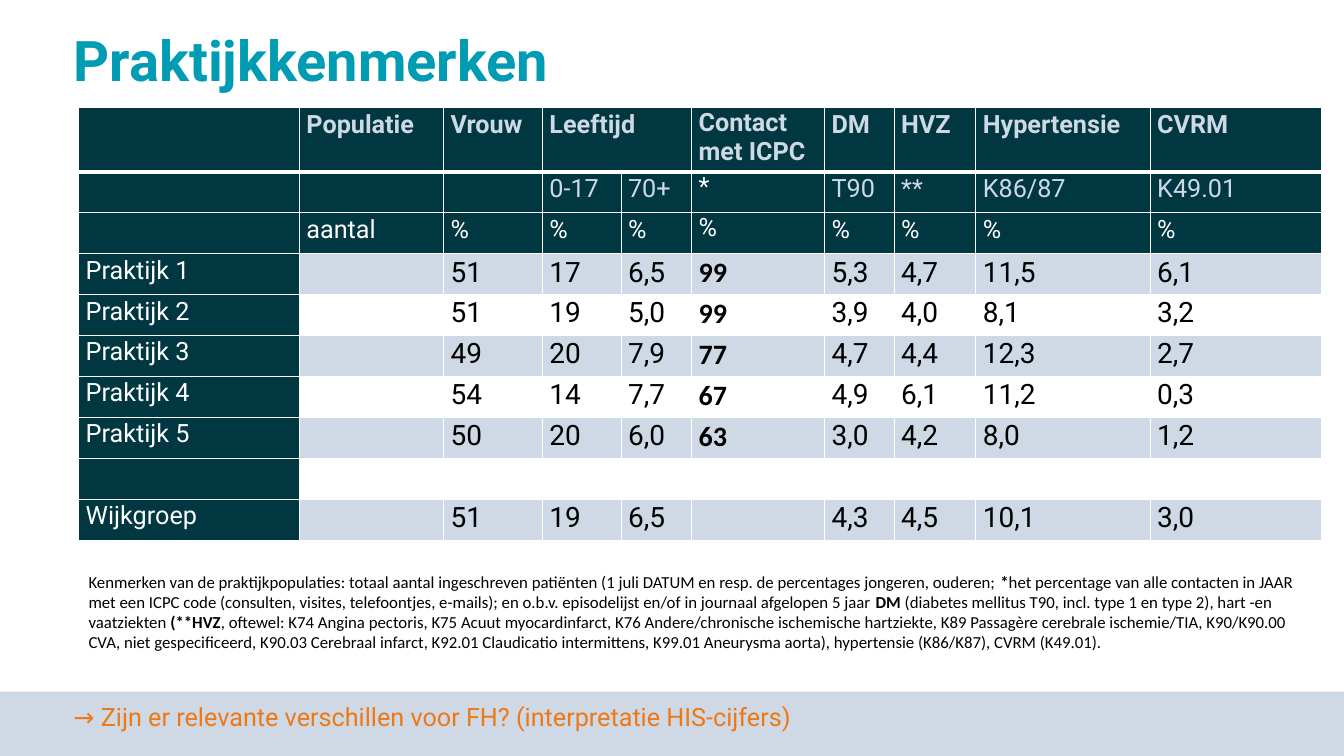
import pptx
import pptx.dml.color
import pptx.enum.shapes
import pptx.enum.text
import pptx.oxml
import pptx.oxml.ns
import pptx.util

Pt = pptx.util.Pt
DARK, PALE, WHITE, BLACK = "003741", "CED9E5", "FFFFFF", "000000"
TEAL, ORANGE = "009CB4", "F07814"

WIDTHS = [157.7, 103, 70.6, 56.2, 50.4, 95, 49.7, 58.3, 124.6, 122.4]
HEIGHTS = [45.8] + [29.25] * 9
ROWS = [
    "|Populatie|Vrouw|Leeftijd||Contact met ICPC|DM|HVZ|Hypertensie|CVRM",
    "|||0-17|70+|*|T90|**|K86/87|K49.01",
    "|aantal|%|%|%|%|%|%|%|%",
    "Praktijk 1||51|17|6,5|99|5,3|4,7|11,5|6,1",
    "Praktijk 2||51|19|5,0|99|3,9|4,0|8,1|3,2",
    "Praktijk 3||49|20|7,9|77|4,7|4,4|12,3|2,7",
    "Praktijk 4||54|14|7,7|67|4,9|6,1|11,2|0,3",
    "Praktijk 5||50|20|6,0|63|3,0|4,2|8,0|1,2",
    "|||||||||",
    "Wijkgroep||51|19|6,5||4,3|4,5|10,1|3,0",
]
HEADS, CODE = 3, 5
NOTE = [
    ("Kenmerken van de praktijkpopulaties: totaal aantal ingeschreven patiënten "
     "(1 juli DATUM en resp. de percentages jongeren, ouderen; ", False),
    ("*", True),
    ("het percentage van alle contacten in JAAR met een ICPC code (consulten, "
     "visites, telefoontjes, e-mails); en o.b.v. episodelijst en/of in journaal "
     "afgelopen 5 jaar ", False),
    ("DM", True),
    (" (diabetes mellitus T90, incl. type 1 en type 2), hart -en vaatziekten ", False),
    ("(**HVZ", True),
    (", oftewel: K74 Angina pectoris, K75 Acuut myocardinfarct, K76 "
     "Andere/chronische ischemische hartziekte, K89 Passagère cerebrale "
     "ischemie/TIA, K90/K90.00 CVA, niet gespecificeerd, K90.03 Cerebraal infarct, "
     "K92.01 Claudicatio intermittens, K99.01 Aneurysma aorta), hypertensie "
     "(K86/K87), CVRM (K49.01).", False),
]


def tint(code):
    return pptx.dml.color.RGBColor.from_string(code)


class Deck:
    """Holds the text style and the current slide, and adds its elements."""

    def __init__(self, slide, face):
        self.slide = slide
        self.face = face

    def style(self, para, size, color, bold=None, face=None):
        font = para.font
        font.name = face or self.face
        font.size = Pt(size)
        font.color.rgb = tint(color)
        if bold is not None:
            font.bold = bold

    def band(self, x, y, w, h, color):
        kind = pptx.enum.shapes.MSO_SHAPE.RECTANGLE
        shape = self.slide.shapes.add_shape(kind, Pt(x), Pt(y), Pt(w), Pt(h))
        shape.shadow.inherit = False
        shape.fill.solid()
        shape.fill.fore_color.rgb = tint(color)
        shape.line.fill.background()

    def title(self, text, x, y, w, h):
        box = self.slide.shapes.title
        box.left, box.top, box.width, box.height = Pt(x), Pt(y), Pt(w), Pt(h)
        frame = box.text_frame
        frame.text = text
        frame.vertical_anchor = pptx.enum.text.MSO_ANCHOR.MIDDLE
        para = frame.paragraphs[0]
        para.alignment = pptx.enum.text.PP_ALIGN.LEFT
        para.line_spacing = 0.9
        self.style(para, 40, TEAL, True)

    def text(self, runs, x, y, w, h, size, color, face=None):
        box = self.slide.shapes.add_textbox(Pt(x), Pt(y), Pt(w), Pt(h))
        box.text_frame.word_wrap = True
        para = box.text_frame.paragraphs[0]
        self.style(para, size, color, face=face)
        for words, bold in runs:
            run = para.add_run()
            run.text = words
            run.font.bold = bold

    def edges(self, cell, top, base):
        props = cell._tc.get_or_add_tcPr()
        space = pptx.oxml.ns.nsdecls("a")
        for side, width in zip("LRTB", (1, 1, top, base)):
            props.append(pptx.oxml.parse_xml(
                f'<a:ln{side} {space} w="{Pt(width)}"><a:solidFill>'
                f'<a:srgbClr val="{WHITE}"/></a:solidFill></a:ln{side}>'))

    def cell(self, cell, text, row, col):
        head = row < HEADS
        dark = head or col == 0
        self.edges(cell, 3 if row == 1 else 1, 3 if row == 0 else 1)
        if dark or row % 2:
            cell.fill.solid()
            cell.fill.fore_color.rgb = tint(DARK if dark else PALE)
        else:
            cell.fill.background()
        cell.margin_left = cell.margin_right = Pt(5)
        cell.margin_top = cell.margin_bottom = 0
        cell.text = text
        para = cell.text_frame.paragraphs[0]
        para.line_spacing = 1.0 if head and col == CODE else 1.07
        color = WHITE if dark else BLACK
        if row < 2 and text != "*":
            color = PALE
        key = col == CODE and not head
        self.style(para, 18 if dark else 20, color, row == 0 or key,
                   "Calibri" if key else None)

    def table(self, rows, x, y, widths, heights):
        frame = self.slide.shapes.add_table(
            len(rows), len(widths), Pt(x), Pt(y), Pt(sum(widths)), Pt(sum(heights)))
        grid = frame.table
        grid.first_row = grid.horz_banding = False
        for col, width in zip(grid.columns, widths):
            col.width = Pt(width)
        for row, height in zip(grid.rows, heights):
            row.height = Pt(height)
        for r, line in enumerate(rows):
            for c, text in enumerate(line.split("|")):
                self.cell(grid.cell(r, c), text, r, c)
        grid.cell(0, 3).merge(grid.cell(0, 4))


def main():
    show = pptx.Presentation()
    show.slide_width, show.slide_height = Pt(960), Pt(540)
    deck = Deck(show.slides.add_slide(show.slide_layouts[5]), "Roboto")
    deck.band(0, 494, 960, 46, PALE)
    deck.title("Praktijkkenmerken", 45.4, 20, 728, 51)
    deck.table(ROWS, 56.2, 77, WIDTHS, HEIGHTS)
    deck.text(NOTE, 56.2, 404.6, 875, 65.5, 12, BLACK, "Calibri")
    ask = "→ Zijn er relevante verschillen voor FH? (interpretatie HIS-cijfers)"
    deck.text([(ask, False)], 45.4, 497.5, 875, 29, 18, ORANGE)
    show.save("out.pptx")


if __name__ == "__main__":
    main()
